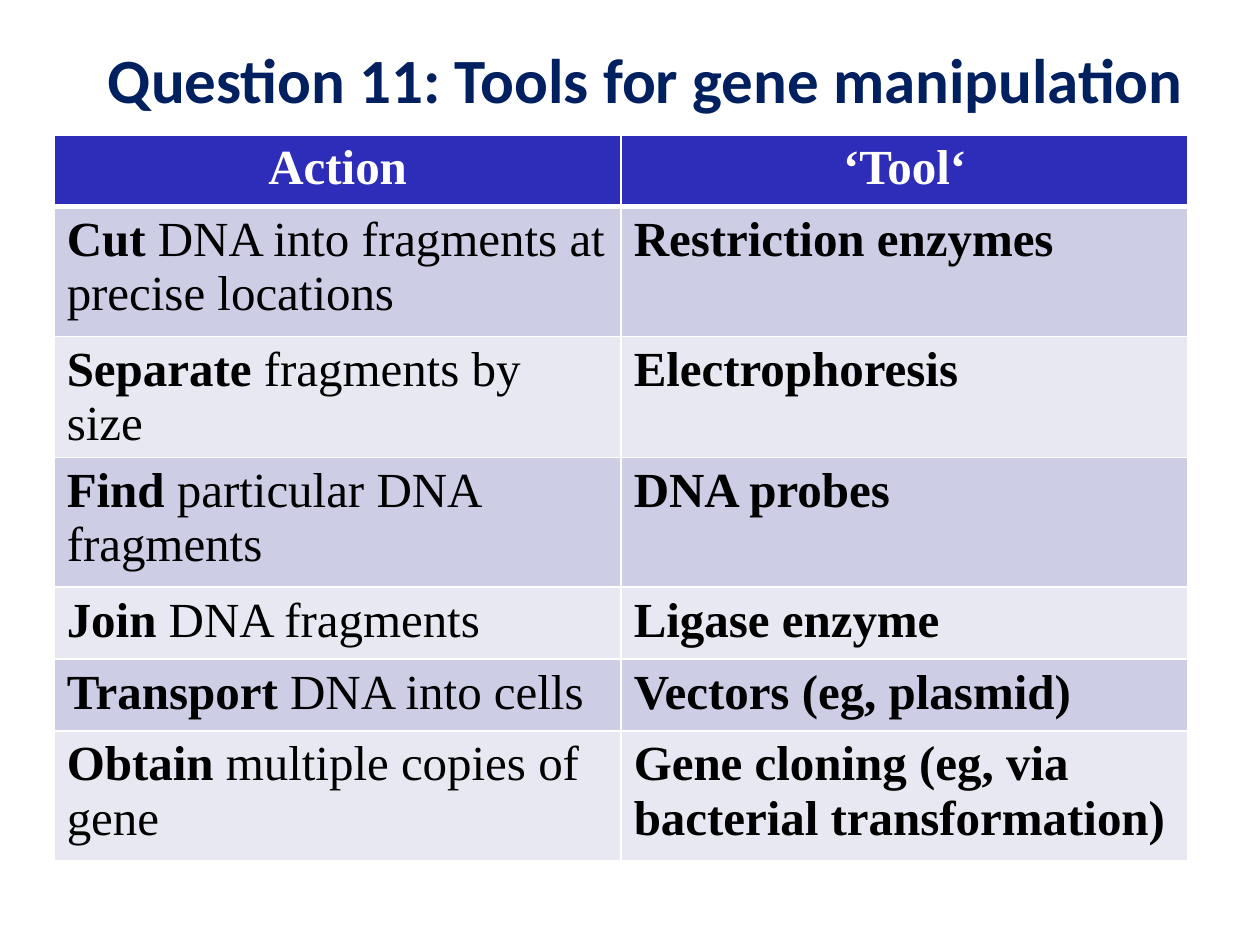
from dataclasses import dataclass

from lxml import etree
from pptx import Presentation
from pptx import util as u
from pptx.dml.color import RGBColor
from pptx.enum import text
from pptx.oxml.ns import qn


@dataclass(frozen=True)
class Theme:
    """Colours, fonts and type sizes of the slide."""
    title: str = "002060"
    header: str = "2D2DB9"
    bands: tuple = ("CDCDE6", "E8E8F3")
    ink: str = "000000"
    white: str = "FFFFFF"
    title_font: str = "Calibri"
    table_font: str = "Times New Roman"
    title_size: int = 36
    table_size: int = 28
    rule: int = 1
    header_rule: int = 3


THEME = Theme()
WIDTH, HEIGHT = u.Inches(10), u.Inches(7.5)
TITLE = "Question 11: Tools for gene manipulation"
HEADINGS = ("Action", "‘Tool‘")
SINGLE, DOUBLE = 0.57, 1.03
ACTIONS = [
    ("Cut", " DNA into fragments at precise locations", "Restriction enzymes", DOUBLE),
    ("Separate", " fragments by size", "Electrophoresis", SINGLE),
    ("Find", " particular DNA fragments", "DNA probes", DOUBLE),
    ("Join", " DNA fragments", "Ligase enzyme", SINGLE),
    ("Transport", " DNA into cells", "Vectors (eg, plasmid)", SINGLE),
    ("Obtain", " multiple copies of gene",
     "Gene cloning (eg, via bacterial transformation)", DOUBLE),
]


def add_span(para, words, font, size, colour, bold=True):
    """Append one formatted run to a paragraph."""
    span = para.add_run()
    span.text = words
    span.font.name = font
    span.font.size = u.Pt(size)
    span.font.bold = bold
    span.font.color.rgb = RGBColor.from_string(colour)


def set_borders(cell, bottom, top):
    """Draw white rules on the four sides of a cell."""
    properties = cell._tc.get_or_add_tcPr()
    sides = {"lnL": THEME.rule, "lnR": THEME.rule, "lnT": top, "lnB": bottom}
    for place, (side, points) in enumerate(sides.items()):
        line = etree.Element(qn(f"a:{side}"), w=str(u.Pt(points)))
        fill = etree.SubElement(line, qn("a:solidFill"))
        etree.SubElement(fill, qn("a:srgbClr"), val=THEME.white)
        properties.insert(place, line)


def fill_cell(cell, spans, fill, colour, align, bottom=THEME.rule, top=THEME.rule):
    """Write (words, bold) spans in a cell and give it fill and rules."""
    cell.fill.solid()
    cell.fill.fore_color.rgb = RGBColor.from_string(fill)
    set_borders(cell, bottom, top)
    para = cell.text_frame.paragraphs[0]
    para.alignment = align
    for words, bold in spans:
        add_span(para, words, THEME.table_font, THEME.table_size, colour, bold)


def place_title(page, left, top, width, height):
    """Place and format the title placeholder in the given box."""
    title = page.shapes.title
    title.left, title.top, title.width, title.height = left, top, width, height
    title.text_frame.vertical_anchor = text.MSO_ANCHOR.MIDDLE
    para = title.text_frame.paragraphs[0]
    para.alignment = text.PP_ALIGN.CENTER
    add_span(para, TITLE, THEME.title_font, THEME.title_size, THEME.title)


def place_table(page, left, top, width):
    """Place the table of actions and tools at the given width."""
    heights = [u.Inches(rows) for rows in (SINGLE, *(action[3] for action in ACTIONS))]
    table = page.shapes.add_table(len(heights), len(HEADINGS), left, top,
                                  width, sum(heights)).table
    for row, height in zip(table.rows, heights):
        row.height = height
    for column, heading in enumerate(HEADINGS):
        fill_cell(table.cell(0, column), [(heading, True)], THEME.header, THEME.white,
                  text.PP_ALIGN.CENTER, bottom=THEME.header_rule)
    for row, (verb, rest, tool, _) in enumerate(ACTIONS, start=1):
        above = THEME.header_rule if row == 1 else THEME.rule
        for column, spans in enumerate(([(verb, True), (rest, False)], [(tool, True)])):
            fill_cell(table.cell(row, column), spans, THEME.bands[(row - 1) % 2],
                      THEME.ink, text.PP_ALIGN.LEFT, top=above)


def main():
    """Build the slide and save it."""
    deck = Presentation()
    deck.slide_width, deck.slide_height = WIDTH, HEIGHT
    page = deck.slides.add_slide(deck.slide_layouts[5])
    margin = u.Inches(0.43)
    place_table(page, margin, u.Inches(1.07), int(WIDTH * 0.9))
    place_title(page, margin, 0, u.Inches(9.39), HEIGHT // 6)
    deck.save("out.pptx")


if __name__ == "__main__":
    main()
